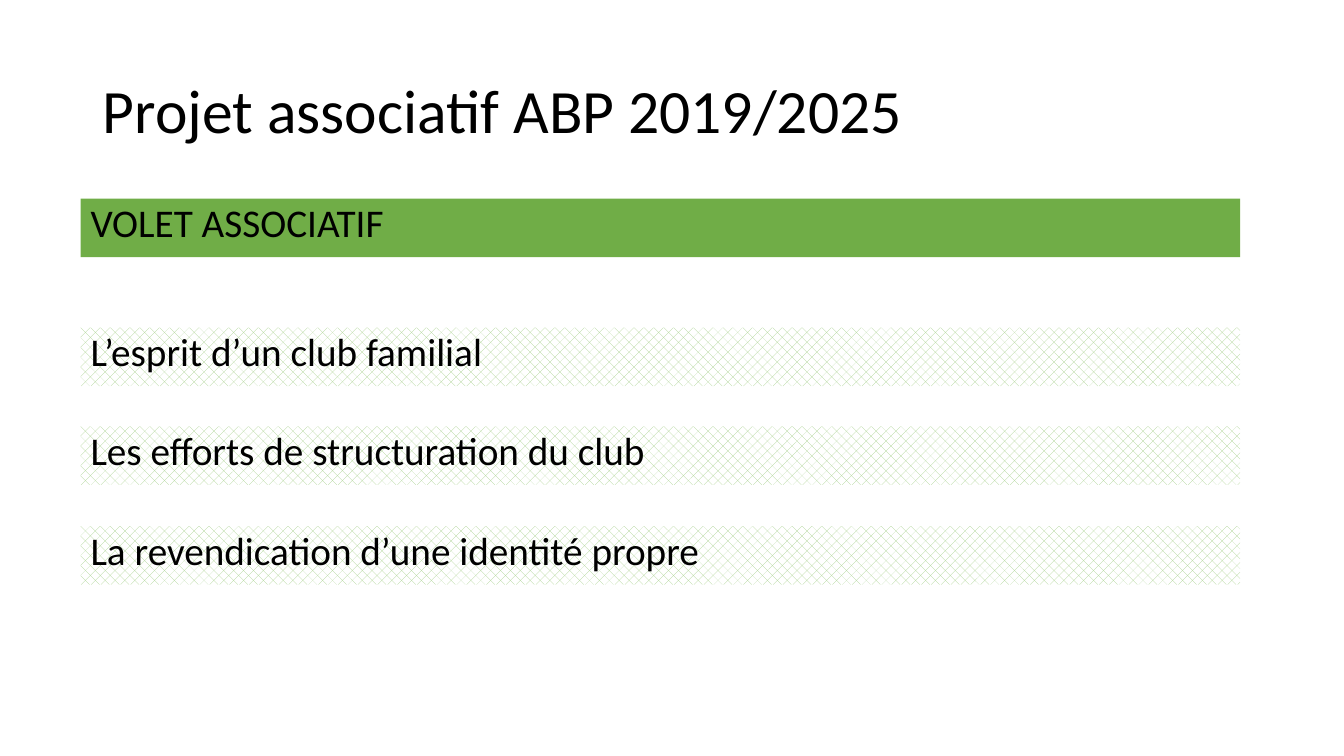
from dataclasses import dataclass

from pptx import Presentation
from pptx import util as u
from pptx.dml.color import RGBColor
from pptx.enum import dml, shapes, text
from pptx.slide import Slide
from pptx.text.text import TextFrame

COLORS = {"text": "000000", "heading": "70AD47", "hatch": "A9D18E", "paper": "FFFFFF"}
FONT = "Calibri"
BAND_LEFT, BAND_WIDTH, BAND_HEIGHT = 0.8, 11.5, 0.58


@dataclass
class Band:
    label: str
    top: float
    hatched: bool = True


BANDS = [
    Band("VOLET ASSOCIATIF", 1.97, hatched=False),
    Band("L’esprit d’un club familial", 3.25),
    Band("Les efforts de structuration du club", 4.23),
    Band("La revendication d’une identité propre", 5.22),
]


def color(name: str) -> RGBColor:
    return RGBColor.from_string(COLORS[name])


def write(tf: TextFrame, content: str, size: int, anchor: text.MSO_ANCHOR,
          space_before: int = 0) -> None:
    tf.text = content
    tf.word_wrap = True
    tf.auto_size = text.MSO_AUTO_SIZE.NONE
    tf.vertical_anchor = anchor
    p = tf.paragraphs[0]
    p.alignment = text.PP_ALIGN.LEFT
    p.line_spacing = 0.9
    p.space_before = u.Pt(space_before)
    font = p.runs[0].font
    font.name = FONT
    font.size = u.Pt(size)
    font.color.rgb = color("text")


def add_title(s: Slide, content: str) -> None:
    sp = s.shapes.title
    sp.left, sp.top = u.Inches(0.92), u.Inches(0.4)
    sp.width, sp.height = u.Inches(11.5), u.Inches(1.45)
    write(sp.text_frame, content, 44, text.MSO_ANCHOR.MIDDLE)


def add_band(s: Slide, band: Band) -> None:
    sp = s.shapes.add_shape(
        shapes.MSO_SHAPE.RECTANGLE, u.Inches(BAND_LEFT), u.Inches(band.top),
        u.Inches(BAND_WIDTH), u.Inches(BAND_HEIGHT))
    sp.shadow.inherit = False
    sp.line.fill.background()
    if band.hatched:
        sp.fill.patterned()
        sp.fill.pattern = dml.MSO_PATTERN.PERCENT_30
        sp.fill.fore_color.rgb = color("hatch")
        sp.fill.back_color.rgb = color("paper")
    else:
        sp.fill.solid()
        sp.fill.fore_color.rgb = color("heading")
    write(sp.text_frame, band.label, 28, text.MSO_ANCHOR.TOP, space_before=10)


def main() -> None:
    prs = Presentation()
    prs.slide_width, prs.slide_height = u.Inches(13.33), u.Inches(7.5)
    title_only = prs.slide_layouts[5]
    s = prs.slides.add_slide(title_only)
    add_title(s, "Projet associatif ABP 2019/2025")
    for band in BANDS:
        add_band(s, band)
    prs.save("out.pptx")


if __name__ == "__main__":
    main()
